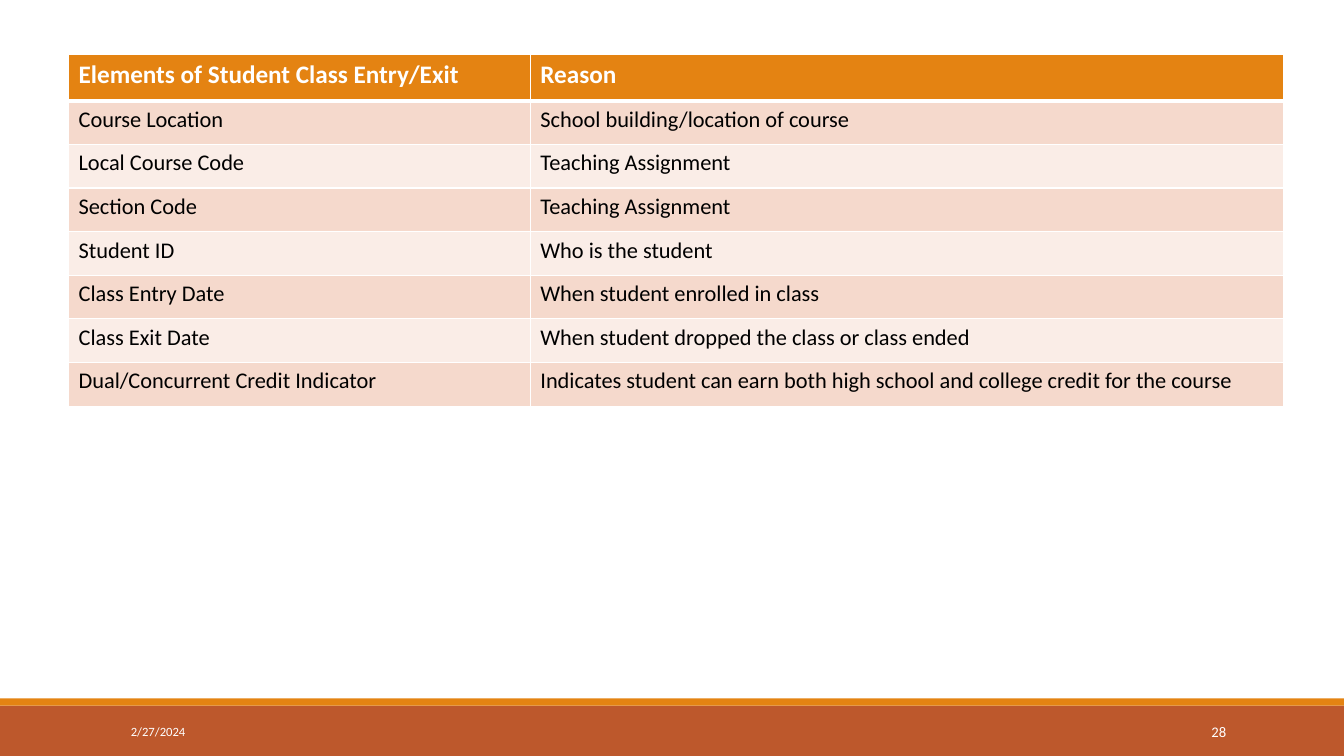
from lxml import etree
from pptx import Presentation
from pptx.dml.color import RGBColor
from pptx.enum import shapes, text
from pptx.oxml import ns
from pptx.util import Inches, Pt

COLORS = {
    "header": "E48312", "footer": "BD582C", "dark_band": "F5D9CC",
    "light_band": "FAEDE7", "white": "FFFFFF", "black": "000000",
}
ROWS = [
    ("Elements of Student Class Entry/Exit", "Reason"),
    ("Course Location", "School building/location of course"),
    ("Local Course Code", "Teaching Assignment"),
    ("Section Code", "Teaching Assignment"),
    ("Student ID", "Who is the student"),
    ("Class Entry Date", "When student enrolled in class"),
    ("Class Exit Date", "When student dropped the class or class ended"),
    ("Dual/Concurrent Credit Indicator",
     "Indicates student can earn both high school and college credit for the course"),
]
COL_WIDTHS = (4.58, 7.47)
HEADER_HEIGHT, TABLE_HEIGHT = 0.46, 3.49


def write(tf, words, size, color, bold=False):
    p = tf.paragraphs[0]
    r = p.add_run()
    r.text = words
    for name, value in {"name": "Calibri", "size": Pt(size), "bold": bold}.items():
        setattr(r.font, name, value)
    r.font.color.rgb = RGBColor.from_string(COLORS[color])
    return p


def add_borders(cell, widths):
    """Draw white cell borders; widths maps each side (L, R, T, B) to points."""
    tcPr = cell._tc.get_or_add_tcPr()
    for side, width in widths.items():
        ln = etree.SubElement(tcPr, ns.qn(f"a:ln{side}"), w=str(Pt(width)))
        fill = etree.SubElement(ln, ns.qn("a:solidFill"))
        etree.SubElement(fill, ns.qn("a:srgbClr"), val=COLORS["white"])


prs = Presentation()
prs.slide_width, prs.slide_height = Inches(13.33), Inches(7.5)
s = prs.slides.add_slide(prs.slide_layouts[6])

# Footer bars
for top, height, color in ((7, 0.5, "footer"), (6.93, 0.07, "header")):
    bar = s.shapes.add_shape(shapes.MSO_SHAPE.RECTANGLE, 0, Inches(top),
                             prs.slide_width, Inches(height))
    bar.shadow.inherit = False
    bar.fill.solid()
    bar.fill.fore_color.rgb = RGBColor.from_string(COLORS[color])
    bar.line.fill.background()

# Table of class entry/exit elements
table = s.shapes.add_table(len(ROWS), len(COL_WIDTHS), Inches(0.68), Inches(0.54),
                           Inches(sum(COL_WIDTHS)), Inches(TABLE_HEIGHT)).table
for column, width in zip(table.columns, COL_WIDTHS):
    column.width = Inches(width)
body_height = (TABLE_HEIGHT - HEADER_HEIGHT) / (len(ROWS) - 1)

for i, row in enumerate(ROWS):
    header = i == 0
    table.rows[i].height = Inches(HEADER_HEIGHT if header else body_height)
    band = "header" if header else "dark_band" if i % 2 else "light_band"
    for j, words in enumerate(row):
        cell = table.cell(i, j)
        add_borders(cell, {"L": 1, "R": 1, "T": 3 if i == 1 else 1, "B": 3 if header else 1})
        cell.fill.solid()
        cell.fill.fore_color.rgb = RGBColor.from_string(COLORS[band])
        write(cell.text_frame, words, 18 if header else 16,
              "white" if header else "black", header)

# Date and slide number
for words, left, width, size, align in (
    ("2/27/2024", 1.2, 2.7, 9, text.PP_ALIGN.LEFT),
    ("28", 10.83, 1.43, 10.5, text.PP_ALIGN.RIGHT),
):
    tf = s.shapes.add_textbox(Inches(left), Inches(7.06), Inches(width), Inches(0.4)).text_frame
    tf.word_wrap = True
    tf.vertical_anchor = text.MSO_ANCHOR.MIDDLE
    write(tf, words, size, "white").alignment = align

prs.save("out.pptx")
